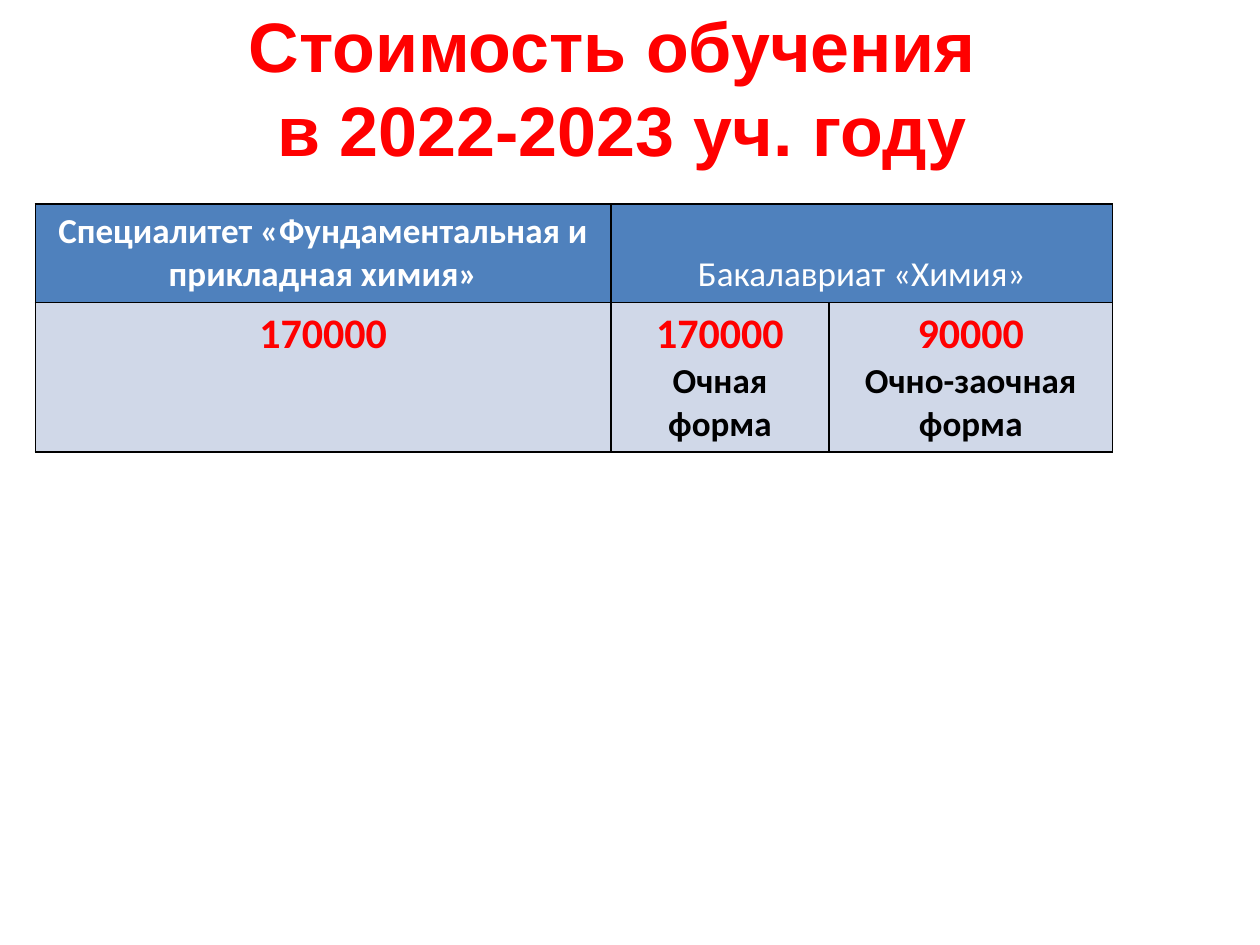
from lxml import etree
from pptx import Presentation, util as u
from pptx.dml.color import RGBColor
from pptx.enum import text
from pptx.oxml.ns import qn

WIDTH, HEIGHT = 10, 7.5
RED, WHITE, BLACK = "FF0000", "FFFFFF", "000000"
HEADER_FILL, BODY_FILL = "4F81BD", "D0D8E8"
COLUMNS = [4.57, 1.73, 2.25]
ROWS = [0.77, 1.18]


def color(value):
    return RGBColor.from_string(value)


def write(tf, lines, font):
    """Fill a frame with centred lines of (words, size, colour, bold)."""
    for i, (words, size, shade, bold) in enumerate(lines):
        p = tf.paragraphs[0] if i == 0 else tf.add_paragraph()
        p.alignment = text.PP_ALIGN.CENTER
        r = p.add_run()
        r.text = words
        r.font.name, r.font.size, r.font.bold = font, u.Pt(size), bold
        r.font.color.rgb = color(shade)


def add_title(s, x, y, w, h, lines):
    sp = s.shapes.add_textbox(*(u.Inches(v) for v in (x, y, w, h)))
    tf = sp.text_frame
    tf.word_wrap = False
    tf.auto_size = text.MSO_AUTO_SIZE.SHAPE_TO_FIT_TEXT
    write(tf, [(line, 40, RED, True) for line in lines], "Arial")


def add_borders(cell):
    tc_pr = cell._tc.get_or_add_tcPr()
    for i, side in enumerate(("lnL", "lnR", "lnT", "lnB")):
        ln = etree.Element(qn("a:" + side), w=str(u.Pt(1)))
        fill = etree.SubElement(ln, qn("a:solidFill"))
        etree.SubElement(fill, qn("a:srgbClr"), val=BLACK)
        tc_pr.insert(i, ln)  # borders come before the fill


def add_price_table(s, x, y, content):
    table = s.shapes.add_table(len(ROWS), len(COLUMNS), u.Inches(x), u.Inches(y),
                               u.Inches(sum(COLUMNS)), u.Inches(sum(ROWS))).table
    for column, width in zip(table.columns, COLUMNS):
        column.width = u.Inches(width)
    for row, height in zip(table.rows, ROWS):
        row.height = u.Inches(height)
    table.cell(0, 1).merge(table.cell(0, 2))
    for i, row in enumerate(content):
        for j, lines in enumerate(row):
            cell = table.cell(i, j)
            cell.fill.solid()
            cell.fill.fore_color.rgb = color(BODY_FILL if i else HEADER_FILL)
            add_borders(cell)
            write(cell.text_frame, lines, "Calibri")
    # The merged heading sits on the last line of its row
    table.cell(0, 1).vertical_anchor = text.MSO_ANCHOR.BOTTOM


def price(amount, form=None):
    lines = [(amount, 24, RED, True)]
    return lines + [(form, 20, BLACK, True)] if form else lines


def main():
    prs = Presentation()
    prs.slide_width, prs.slide_height = u.Inches(WIDTH), u.Inches(HEIGHT)
    s = prs.slides.add_slide(prs.slide_layouts[6])

    # Tuition table
    add_price_table(s, 0.28, 1.62, [
        [[("Специалитет «Фундаментальная и прикладная химия»", 20, WHITE, True)],
         [("Бакалавриат «Химия»", 20, WHITE, False)], []],
        [price("170000"), price("170000", "Очная форма"),
         price("90000", "Очно-заочная форма")],
    ])

    # Title
    add_title(s, 1.84, -0.03, 6.19, 1.45,
              ["Стоимость обучения ", "в 2022-2023 уч. году"])

    prs.save("out.pptx")


if __name__ == "__main__":
    main()
